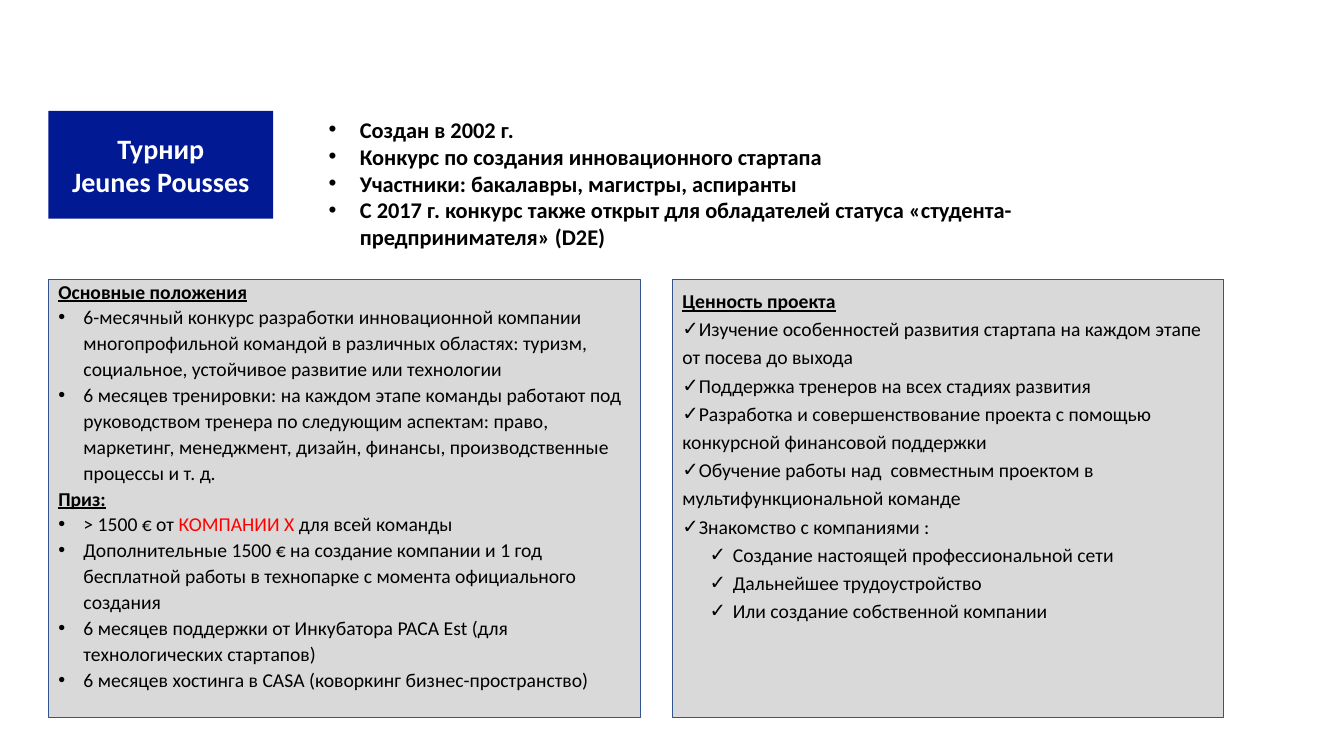
from lxml import etree
from pptx import Presentation
from pptx.dml.color import RGBColor
from pptx.enum.shapes import MSO_SHAPE
from pptx.enum.text import MSO_ANCHOR, MSO_AUTO_SIZE, PP_ALIGN
from pptx.oxml.ns import qn
from pptx.util import Inches, Pt

RECTANGLE = MSO_SHAPE.RECTANGLE
TOP, MIDDLE = MSO_ANCHOR.TOP, MSO_ANCHOR.MIDDLE
LEFT, CENTER = PP_ALIGN.LEFT, PP_ALIGN.CENTER
NO_FIT, GROW = MSO_AUTO_SIZE.NONE, MSO_AUTO_SIZE.SHAPE_TO_FIT_TEXT

COLORS = {"navy": "011993", "white": "FFFFFF", "black": "000000",
          "panel": "D9D9D9", "border": "325491", "red": "FF0000"}
FONT = "Calibri"

TITLE = ["Турнир", "Jeunes Pousses"]
SUMMARY = [
    "Создан в 2002 г.",
    "Конкурс по создания инновационного стартапа",
    "Участники: бакалавры, магистры, аспиранты",
    "С 2017 г. конкурс также открыт для обладателей статуса «студента-предпринимателя» (D2E)",
]
SPONSOR = "КОМПАНИИ Х"
RULES = [
    ("lead", "Основные положения"),
    ("dot", "6-месячный конкурс разработки инновационной компании многопрофильной командой в различных областях: туризм, социальное, устойчивое развитие или технологии"),
    ("dot", "6 месяцев тренировки: на каждом этапе команды работают под руководством тренера по следующим аспектам: право, маркетинг, менеджмент, дизайн, финансы, производственные процессы и т. д."),
    ("heading", "Приз:"),
    ("dot", f"> 1500 € от {SPONSOR} для всей команды"),
    ("dot", "Дополнительные 1500 € на создание компании и 1 год бесплатной работы в технопарке с момента официального создания"),
    ("dot", "6 месяцев поддержки от Инкубатора PACA Est (для технологических стартапов)"),
    ("dot", "6 месяцев хостинга в CASA (коворкинг бизнес-пространство)"),
]
VALUE = [
    ("heading", "Ценность проекта"),
    ("check", "Изучение особенностей развития стартапа на каждом этапе от посева до выхода"),
    ("check", "Поддержка тренеров на всех стадиях развития"),
    ("check", "Разработка и совершенствование проекта с помощью конкурсной финансовой поддержки"),
    ("check", "Обучение работы над  совместным проектом в мультифункциональной команде"),
    ("check", "Знакомство с компаниями :"),
    ("subcheck", "Создание настоящей профессиональной сети"),
    ("subcheck", "Дальнейшее трудоустройство"),
    ("subcheck", "Или создание собственной компании"),
]
BULLETS = {"dot": ("•", 0.25, -0.25), "summary": ("•", 0.31, -0.31),
           "check": ("✓", 0, 0), "subcheck": ("✓", 0.5, -0.23)}
PANELS = [(0.48, 5.87, 1.1, RULES), (6.67, 5.47, 1.2, VALUE)]
PANEL_TOP, PANEL_HEIGHT = 2.77, 4.35


def color(name):
    return RGBColor.from_string(COLORS[name])


def place(box, left, top, width, height):
    box.left, box.top = Inches(left), Inches(top)
    box.width, box.height = Inches(width), Inches(height)


def write(box, items, size, ink="black", bold=False, spacing=1.0, align=LEFT):
    frame = box.text_frame
    frame.word_wrap = True
    for index, (kind, text) in enumerate(items):
        para = frame.add_paragraph() if index else frame.paragraphs[0]
        para.alignment = align
        para.line_spacing = 0.8 if kind == "lead" else spacing
        para.space_before = Pt(0)
        para.level = 1 if kind == "subcheck" else 0
        properties = para._p.get_or_add_pPr()
        mark, margin, indent = BULLETS.get(kind, (None, 0, 0))
        properties.set("marL", str(Inches(margin)))
        properties.set("indent", str(Inches(indent)))
        if mark:
            etree.SubElement(properties, qn("a:buFont")).set("typeface", "Arial")
            etree.SubElement(properties, qn("a:buChar")).set("char", mark)
        else:
            etree.SubElement(properties, qn("a:buNone"))
        heading = kind in ("lead", "heading")
        para.font.name, para.font.size = FONT, Pt(size)
        para.font.bold = bold or heading
        para.font.underline = heading
        para.font.color.rgb = color(ink)
        before, sponsor, after = text.partition(SPONSOR)
        for part in filter(None, (before, sponsor, after)):
            span = para.add_run()
            span.text = part
            if part == SPONSOR:
                span.font.color.rgb = color("red")


deck = Presentation()
deck.slide_width, deck.slide_height = Inches(13.33), Inches(7.5)
page = deck.slides.add_slide(deck.slide_layouts[1])

title = page.shapes.title
place(title, 0.48, 1.1, 2.23, 1.07)
title.fill.solid()
title.fill.fore_color.rgb = color("navy")
frame = title.text_frame
frame.auto_size, frame.vertical_anchor = NO_FIT, MIDDLE
frame.margin_left = frame.margin_right = Inches(0.08)
frame.margin_top = frame.margin_bottom = Inches(0.08)
write(title, [("title", line) for line in TITLE], 20, "white", True, align=CENTER)

summary = page.placeholders[1]
place(summary, 3.16, 1.1, 7.17, 1.45)
summary.text_frame.auto_size = GROW
write(summary, [("summary", line) for line in SUMMARY], 16, bold=True)

for left, width, spacing, items in PANELS:
    panel = page.shapes.add_shape(RECTANGLE, Inches(left), Inches(PANEL_TOP),
                                  Inches(width), Inches(PANEL_HEIGHT))
    panel.shadow.inherit = False
    panel.fill.solid()
    panel.fill.fore_color.rgb = color("panel")
    panel.line.color.rgb = color("border")
    panel.line.width = Pt(0.75)
    panel.text_frame.vertical_anchor = TOP
    write(panel, items, 14, spacing=spacing)

deck.save("out.pptx")
